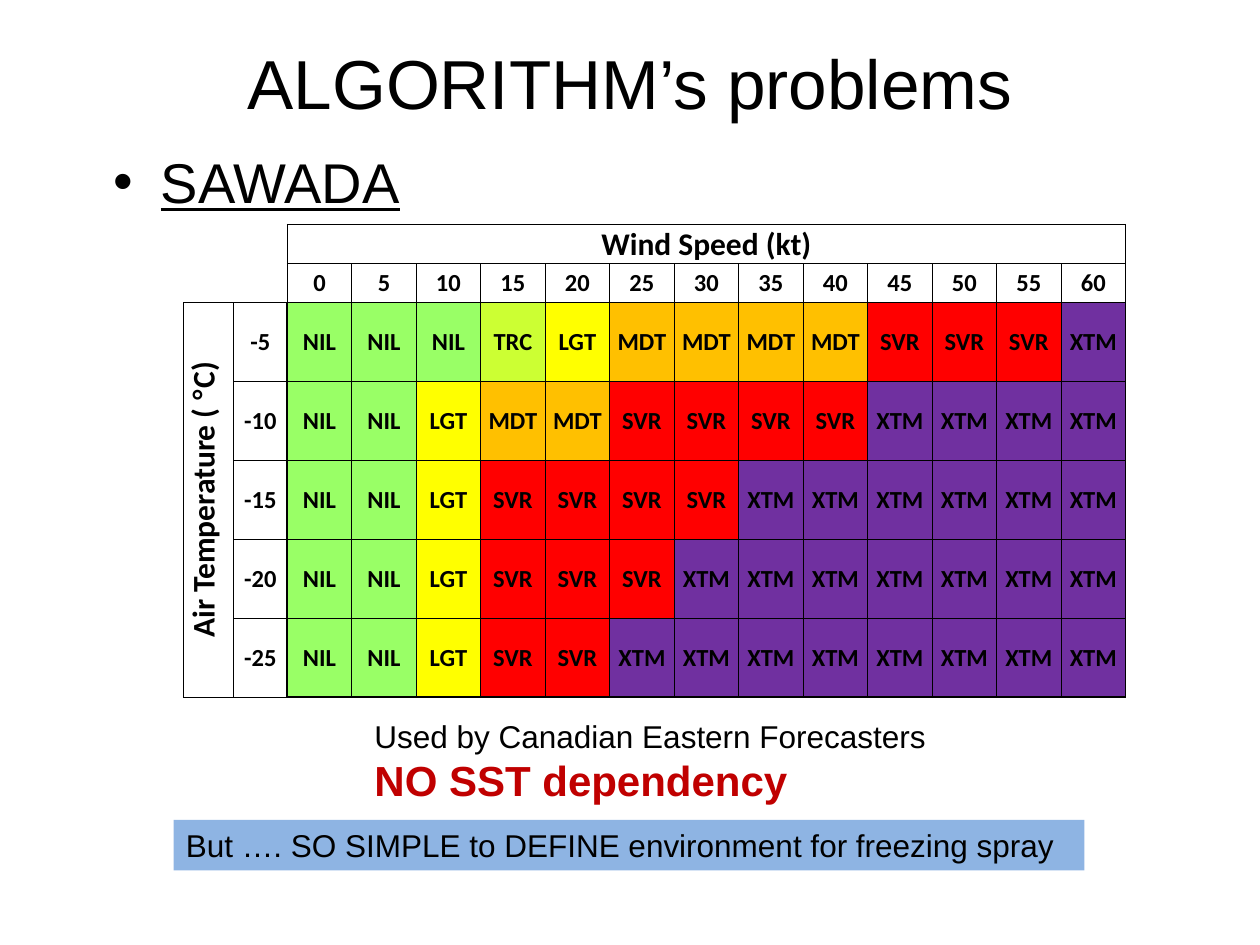
from lxml.etree import SubElement
from pptx import Presentation
from pptx.dml.color import RGBColor
from pptx.enum.shapes import MSO_SHAPE
from pptx.enum.text import MSO_ANCHOR, MSO_AUTO_SIZE, PP_ALIGN
from pptx.oxml.ns import qn
from pptx.util import Cm, Pt

# Content
TITLE = "ALGORITHM’s problems"
BULLET = "SAWADA"
SPEED_HEADING = "Wind Speed (kt)"
TEMP_HEADING = [("Air Temperature ( ", "Calibri"), ("°", "Arial"), ("C)", "Calibri")]
SPEEDS = [0, 5, 10, 15, 20, 25, 30, 35, 40, 45, 50, 55, 60]
ICING = {
    -5: "NIL NIL NIL TRC LGT MDT MDT MDT MDT SVR SVR SVR XTM",
    -10: "NIL NIL LGT MDT MDT SVR SVR SVR SVR XTM XTM XTM XTM",
    -15: "NIL NIL LGT SVR SVR SVR SVR XTM XTM XTM XTM XTM XTM",
    -20: "NIL NIL LGT SVR SVR SVR XTM XTM XTM XTM XTM XTM XTM",
    -25: "NIL NIL LGT SVR SVR XTM XTM XTM XTM XTM XTM XTM XTM",
}
# text, size, bold, colour
NOTES = [("Used by Canadian Eastern Forecasters", 18, False, "text"),
         ("NO SST dependency", 24, True, "alert")]
CLOSING = [("But …. SO SIMPLE to DEFINE environment for freezing spray", 18, False, "text")]

COLORS = {"text": "000000", "alert": "C00000", "banner": "8EB4E3",
          "NIL": "99FF66", "TRC": "CCFF33", "LGT": "FFFF00",
          "MDT": "FFC000", "SVR": "FF0000", "XTM": "7030A0"}
HEAD = 2  # heading rows and heading columns
ROWS, COLS = HEAD + len(ICING), HEAD + len(SPEEDS)
NO_STYLE = "{2D5ABB26-0587-4C30-8999-92F81FD0307C}"


def rgb(name):
    return RGBColor.from_string(COLORS[name])


def set_font(font, size, bold=False, color="text", name="Arial"):
    font.name, font.size, font.bold = name, Pt(size), bold
    font.color.rgb = rgb(color)


def place(sp, left, top, width, height):
    sp.left, sp.top, sp.width, sp.height = Cm(left), Cm(top), Cm(width), Cm(height)


def write_lines(sp, lines):
    tf = sp.text_frame
    tf.word_wrap = False
    tf.auto_size = MSO_AUTO_SIZE.SHAPE_TO_FIT_TEXT
    for i, (text, size, bold, color) in enumerate(lines):
        p = tf.paragraphs[0] if i == 0 else tf.add_paragraph()
        p.text, p.alignment = text, PP_ALIGN.LEFT
        set_font(p.font, size, bold, color)


def write_cell(cell, runs, size):
    p = cell.text_frame.paragraphs[0]
    p.alignment = PP_ALIGN.CENTER
    for text, name in runs:
        r = p.add_run()
        r.text = text
        set_font(r.font, size, True, name=name)


def draw_borders(cell, widths):
    tc_pr = cell._tc.get_or_add_tcPr()
    for side, width in widths.items():
        ln = SubElement(tc_pr, qn(f"a:ln{side}"), w=str(Pt(width)))
        fill = SubElement(ln, qn("a:solidFill"))
        SubElement(fill, qn("a:srgbClr"), val=COLORS["text"])


def border_widths(row, col):
    """Thin grid, with a thicker frame around the block of icing values."""
    in_rows, in_cols = row >= HEAD, col >= HEAD
    if not in_rows and not in_cols:  # empty corner
        return ({"R": 0.5} if col == HEAD - 1 else {}) | ({"B": 0.5} if row == HEAD - 1 else {})
    thick = {
        "L": in_rows and col == HEAD,
        "R": in_rows and col in (HEAD - 1, COLS - 1),
        "T": in_cols and row == HEAD,
        "B": in_cols and row in (HEAD - 1, ROWS - 1),
    }
    return {side: 1 if is_thick else 0.5 for side, is_thick in thick.items()}


prs = Presentation()
prs.slide_width, prs.slide_height = Cm(25.4), Cm(19.05)
s = prs.slides.add_slide(prs.slide_layouts[1])

# Title
title = s.shapes.title
place(title, 1.27, 0.78, 22.86, 1.75)
title.text_frame.text = TITLE
title.text_frame.auto_size = MSO_AUTO_SIZE.NONE
title.text_frame.vertical_anchor = MSO_ANCHOR.MIDDLE
p = title.text_frame.paragraphs[0]
p.alignment = PP_ALIGN.CENTER
set_font(p.font, 39.6)

# Bullet
body = s.placeholders[1]
place(body, 2.04, 2.84, 22.86, 1.88)
tf = body.text_frame
tf.text = BULLET
tf.auto_size = MSO_AUTO_SIZE.NONE
p = tf.paragraphs[0]
p_pr = p._p.get_or_add_pPr()
p_pr.set("marL", str(Cm(0.95)))
p_pr.set("indent", str(Cm(-0.95)))
SubElement(p_pr, qn("a:buFont"), typeface="Arial")
SubElement(p_pr, qn("a:buChar"), char="•")
p.space_before = Pt(0)
set_font(p.font, 32)
p.font.underline = True

# Notes under the table
notes = s.shapes.add_textbox(Cm(7.3), Cm(14.33), Cm(11.73), Cm(2.06))
write_lines(notes, NOTES)

# Icing table
frame = s.shapes.add_table(ROWS, COLS, Cm(3.7), Cm(4.52), Cm(18.99), Cm(9.53))
table = frame.table
table.first_row = table.horz_banding = False
table._tbl.tblPr.find(qn("a:tableStyleId")).text = NO_STYLE
for i, column in enumerate(table.columns):
    column.width = Cm((1.01, 1.08)[i] if i < HEAD else 1.3)
for i, row in enumerate(table.rows):
    row.height = Cm(0.79 if i < HEAD else 1.59)
for row in range(ROWS):
    for col in range(COLS):
        cell = table.cell(row, col)
        draw_borders(cell, border_widths(row, col))
        cell.fill.background()
        cell.vertical_anchor = MSO_ANCHOR.MIDDLE
        cell.margin_left = cell.margin_right = cell.margin_top = Cm(0.02)
        cell.margin_bottom = 0

table.cell(0, HEAD).merge(table.cell(0, COLS - 1))
write_cell(table.cell(0, HEAD), [(SPEED_HEADING, "Calibri")], 18)
table.cell(HEAD, 0).merge(table.cell(ROWS - 1, 0))
write_cell(table.cell(HEAD, 0), TEMP_HEADING, 18)
table.cell(HEAD, 0)._tc.get_or_add_tcPr().set("vert", "vert270")

for col, speed in enumerate(SPEEDS, HEAD):
    write_cell(table.cell(1, col), [(str(speed), "Calibri")], 14)
for row, (temperature, levels) in enumerate(ICING.items(), HEAD):
    write_cell(table.cell(row, 1), [(str(temperature), "Calibri")], 14)
    for col, level in enumerate(levels.split(), HEAD):
        cell = table.cell(row, col)
        write_cell(cell, [(level, "Calibri")], 14)
        cell.fill.solid()
        cell.fill.fore_color.rgb = rgb(level)

# Closing banner
banner = s.shapes.add_shape(MSO_SHAPE.RECTANGLE, Cm(3.5), Cm(16.53), Cm(18.36), Cm(1.02))
banner.shadow.inherit = False
banner.fill.solid()
banner.fill.fore_color.rgb = rgb("banner")
banner.line.fill.background()
banner.text_frame.vertical_anchor = MSO_ANCHOR.TOP
write_lines(banner, CLOSING)

prs.save("out.pptx")
